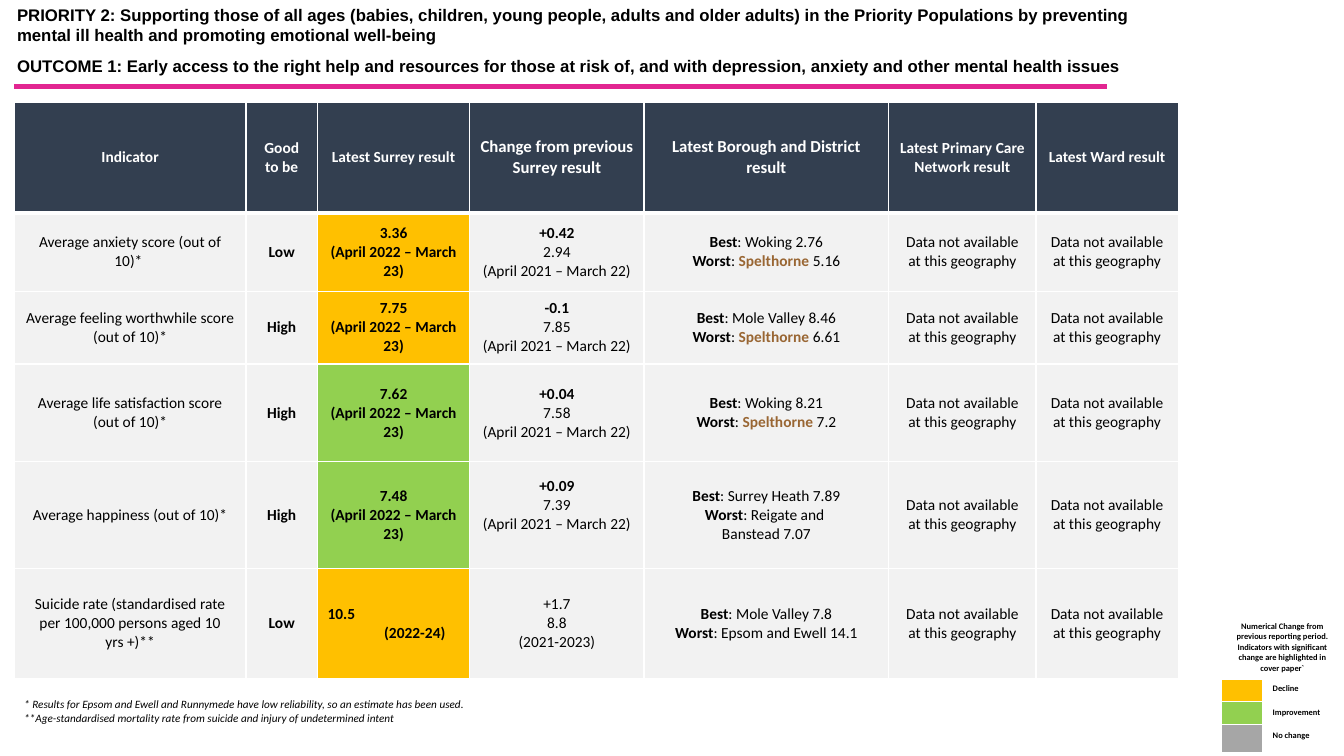
from dataclasses import dataclass

from lxml.etree import SubElement
from pptx import Presentation
from pptx.dml.color import RGBColor
from pptx.enum.shapes import MSO_CONNECTOR as Connector, MSO_SHAPE as Shape
from pptx.enum.text import MSO_ANCHOR as Anchor, PP_ALIGN as Align
from pptx.oxml.ns import qn
from pptx.util import Cm, Pt


@dataclass(frozen=True)
class Theme:
    heading_font: str = "Arial"
    body_font: str = "Calibri"
    white: str = "FFFFFF"
    black: str = "000000"
    navy: str = "333F50"
    pale: str = "F2F2F2"
    pink: str = "E22691"
    brown: str = "996633"
    decline: str = "FFC000"
    improvement: str = "92D050"
    no_change: str = "A6A6A6"
    heading_size: int = 12
    body_size: int = 11
    note_size: int = 8
    legend_size: int = 6


class Board:
    """Holds the theme and the slide being filled."""

    def __init__(self, theme, slide):
        self.theme = theme
        self.slide = slide

    def add_lines(self, frame, lines, size, font=None, color=None, bold=False,
                  italic=False, align=Align.LEFT):
        """A line is a string or a list of (text, bold, colour) parts."""
        for index, line in enumerate(lines):
            para = frame.paragraphs[0] if index == 0 else frame.add_paragraph()
            para.alignment = align
            parts = [(line, bold, None)] if isinstance(line, str) else line
            for text, heavy, tint in parts:
                span = para.add_run()
                span.text = text
                span.font.size = Pt(size)
                span.font.name = font or self.theme.body_font
                span.font.bold = heavy
                span.font.italic = italic
                span.font.color.rgb = RGBColor.from_string(
                    tint or color or self.theme.black)

    def rule(self, left, right, top, color, width):
        line = self.slide.shapes.add_connector(
            Connector.STRAIGHT, Cm(left), Cm(top), Cm(right), Cm(top))
        line.line.color.rgb = RGBColor.from_string(color)
        line.line.width = Pt(width)
        SubElement(line._element.spPr, qn("a:effectLst"))

    def panel(self, left, top, width, height, color):
        box = self.slide.shapes.add_shape(
            Shape.RECTANGLE, Cm(left), Cm(top), Cm(width), Cm(height))
        box.shadow.inherit = False
        box.fill.solid()
        box.fill.fore_color.rgb = RGBColor.from_string(color)
        box.line.color.rgb = RGBColor.from_string(color)
        box.line.width = Pt(0.75)
        box.text_frame.vertical_anchor = Anchor.MIDDLE
        return box.text_frame

    def text_box(self, left, top, width, height):
        box = self.slide.shapes.add_textbox(
            Cm(left), Cm(top), Cm(width), Cm(height))
        box.text_frame.word_wrap = True
        return box.text_frame

    def table(self, left, top, widths, heights, thin, thick):
        """A table with white lines, the one under the first row thicker."""
        table = self.slide.shapes.add_table(
            len(heights), len(widths), Cm(left), Cm(top),
            Cm(sum(widths)), Cm(sum(heights))).table
        table.first_row = table.horz_banding = False
        for column, width in zip(table.columns, widths):
            column.width = Cm(width)
        for index, (row, height) in enumerate(zip(table.rows, heights)):
            row.height = Cm(height)
            for cell in row.cells:
                self.borders(cell, {"L": thin, "R": thin,
                                    "T": thick if index == 1 else thin,
                                    "B": thick if index == 0 else thin})
        return table

    def borders(self, cell, sides):
        properties = cell._tc.get_or_add_tcPr()
        for side, width in sides.items():
            line = SubElement(properties, qn("a:ln" + side), w=str(int(Pt(width))))
            fill = SubElement(line, qn("a:solidFill"))
            SubElement(fill, qn("a:srgbClr"), val=self.theme.white)

    def paint(self, cell, color=None):
        if color is None:
            cell.fill.background()
            return
        cell.fill.solid()
        cell.fill.fore_color.rgb = RGBColor.from_string(color)


def area(label, name, value="", color=None):
    """A borough line: bold label, then the name and its value."""
    if color:
        return [(label, True, None), (": ", False, None),
                (name, True, color), (f" {value}", False, None)]
    return [(label, True, None), (f": {name} {value}", False, None)]


def change(difference, previous, period="(April 2021 – March 22)", bold=True):
    return [[(difference, bold, None)], previous, period]


def main():
    theme = Theme()
    deck = Presentation()
    deck.slide_width, deck.slide_height = Cm(33.87), Cm(19.05)
    board = Board(theme, deck.slides.add_slide(deck.slide_layouts[6]))

    # Heading
    board.rule(0.36, 27.89, 2.18, theme.pink, 3)
    heading = board.panel(0.18, 0.1, 29.54, 1.83, theme.white)
    board.add_lines(heading, [
        "PRIORITY 2: Supporting those of all ages (babies, children, young people, "
        "adults and older adults) in the Priority Populations by preventing mental "
        "ill health and promoting emotional well-being",
        "OUTCOME 1: Early access to the right help and resources for those at risk "
        "of, and with depression, anxiety and other mental health issues",
    ], theme.heading_size, theme.heading_font, bold=True)
    heading.paragraphs[1].line_spacing = 1.5

    # Indicator table
    latest = "(April 2022 – March 23)"
    headers = ["Indicator", "Good to be", "Latest Surrey result",
               "Change from previous Surrey result",
               "Latest Borough and District result",
               "Latest Primary Care Network result", "Latest Ward result"]
    large_headers = (3, 4)
    missing = ["Data not available at this geography"]
    indicators = [
        (["Average anxiety score (out of 10)* "], "Low", theme.decline,
         ["3.36", latest], change("+0.42", "2.94"),
         [area("Best", "Woking", "2.76"),
          area("Worst", "Spelthorne", "5.16", theme.brown)]),
        (["Average feeling worthwhile score (out of 10)*"], "High", theme.decline,
         ["7.75", latest], change("-0.1", "7.85"),
         [area("Best", "Mole Valley", "8.46"),
          area("Worst", "Spelthorne", "6.61", theme.brown)]),
        (["Average life satisfaction score (out of 10)*"], "High", theme.improvement,
         ["7.62", latest], change("+0.04", "7.58"),
         [area("Best", "Woking", "8.21"),
          area("Worst", "Spelthorne", "7.2", theme.brown)]),
        (["Average happiness (out of 10)*"], "High", theme.improvement,
         ["7.48", latest], change("+0.09", "7.39"),
         [area("Best", "Surrey Heath", "7.89"),
          area("Worst", "Reigate and"), "Banstead 7.07"]),
        (["Suicide rate (standardised rate per 100,000 persons aged 10", "yrs +)**"],
         "Low", theme.decline, ["10.5", "(2022-24)"],
         change("+1.7", "8.8", "(2021-2023)", bold=False),
         [area("Best", "Mole Valley", "7.8"),
          area("Worst", "Epsom and Ewell", "14.1")]),
    ]
    results = board.table(0.36, 2.57, [5.84, 1.8, 3.84, 4.39, 6.17, 3.71, 3.58],
                          [2.79, 1.98, 1.83, 2.46, 2.69, 2.77], 1, 3)
    for column, header in enumerate(headers):
        cell = results.cell(0, column)
        size = theme.heading_size if column in large_headers else theme.body_size
        board.paint(cell, theme.navy)
        board.add_lines(cell.text_frame, [header], size, color=theme.white,
                        bold=True, align=Align.CENTER)
    for row, (name, goal, status, result, shift, areas) in enumerate(indicators, 1):
        contents = [name, [goal], result, shift, areas, missing, missing]
        for column, lines in enumerate(contents):
            cell = results.cell(row, column)
            board.paint(cell, status if column == 2 else theme.pale)
            board.add_lines(cell.text_frame, lines, theme.body_size,
                            bold=column in (1, 2), align=Align.CENTER)
    for cell in results.iter_cells():
        cell.vertical_anchor = Anchor.MIDDLE
    results.cell(4, 3).margin_bottom = Cm(0.6)

    # Staggered suicide rate result
    rate, period = results.cell(5, 2).text_frame.paragraphs
    rate.alignment = Align.LEFT
    period._p.get_or_add_pPr().set("marL", str(int(Cm(1.07))))

    # Footnotes
    notes = board.text_box(0.36, 17.45, 28.75, 0.94)
    board.add_lines(notes, [
        "* Results for Epsom and Ewell and Runnymede have low reliability, "
        "so an estimate has been used.",
        "**Age-standardised mortality rate from suicide and injury of "
        "undetermined intent",
    ], theme.note_size, italic=True)

    # Legend
    legend = board.table(30.78, 15.52, [1.04, 2.03], [1.4, 0.58, 0.58, 0.71],
                         0.92, 2.78)
    legend.cell(0, 0).merge(legend.cell(0, 1))
    keys = [("Decline", theme.decline), ("Improvement", theme.improvement),
            ("No change", theme.no_change)]
    captions = [(legend.cell(0, 0), "Numerical Change from previous reporting "
                 "period. Indicators with significant change are highlighted in "
                 "cover paper`", Align.CENTER)]
    for row, (label, color) in enumerate(keys, 1):
        swatch = legend.cell(row, 0)
        board.paint(swatch, color)
        SubElement(swatch.text_frame.paragraphs[0]._p, qn("a:endParaRPr"),
                   sz=str(theme.legend_size * 100))
        captions.append((legend.cell(row, 1), label, Align.LEFT))
    for cell, label, align in captions:
        board.paint(cell)
        board.add_lines(cell.text_frame, [label], theme.legend_size,
                        bold=True, align=align)
        cell.text_frame.paragraphs[0].line_spacing = Pt(7.5)

    deck.save("out.pptx")


if __name__ == "__main__":
    main()
